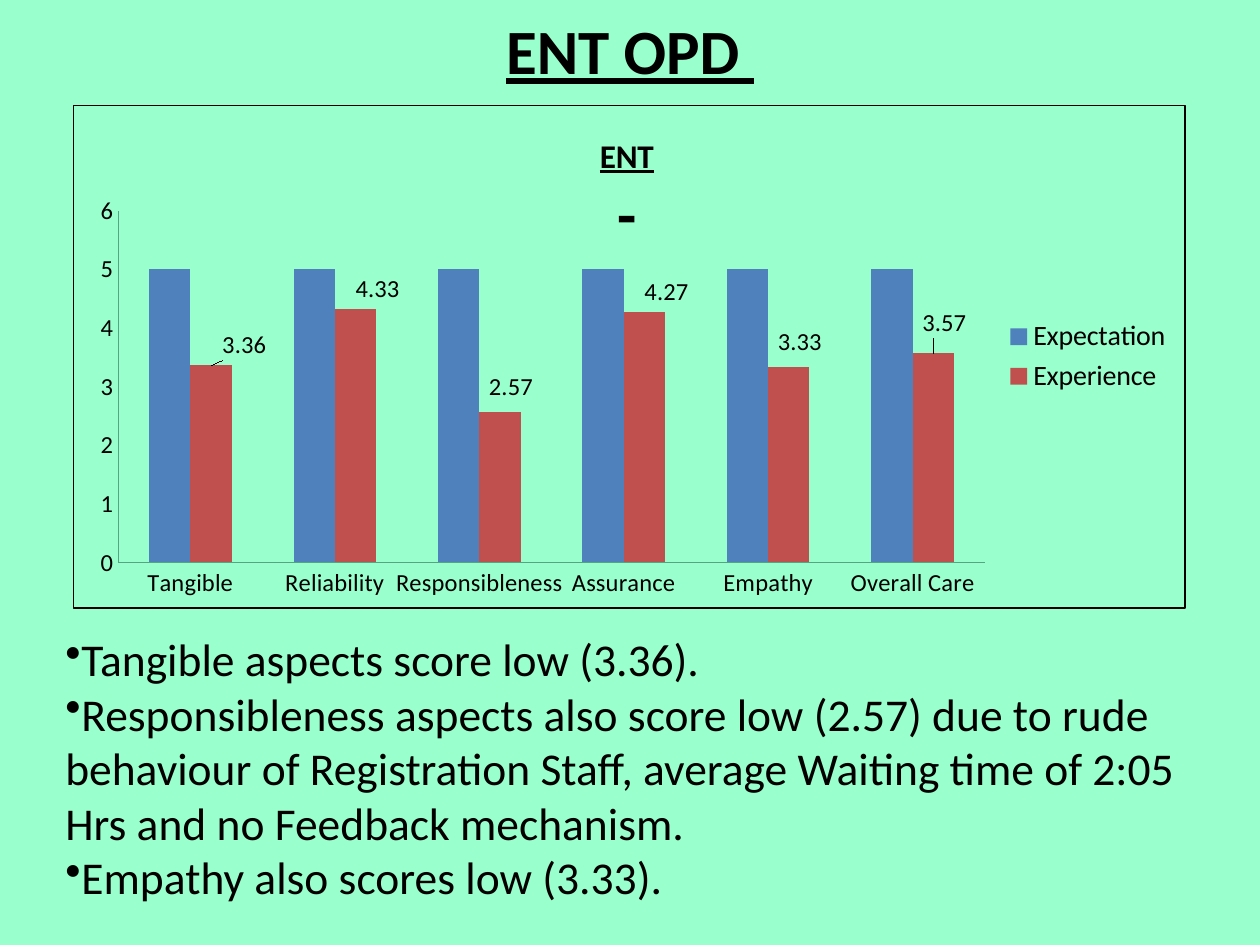
import pptx
import pptx.chart.data
import pptx.dml.color
import pptx.enum.chart
import pptx.enum.text
import pptx.oxml
import pptx.oxml.ns
import pptx.util

Inches, Pt = pptx.util.Inches, pptx.util.Pt
RGBColor = pptx.dml.color.RGBColor
qn = pptx.oxml.ns.qn

FONT = "Calibri"
BLACK = RGBColor(0x00, 0x00, 0x00)
MINT = RGBColor(0x99, 0xFF, 0xCC)
AXIS_GREEN = RGBColor(0x55, 0xA5, 0x85)

TITLE = "ENT OPD "
CATEGORIES = ["Tangible", "Reliability", "Responsibleness",
              "Assurance", "Empathy", "Overall Care"]
SERIES = [
    ("Expectation", [5] * 6, RGBColor(0x4F, 0x81, 0xBD)),
    ("Experience", [3.36, 4.33, 2.57, 4.27, 3.33, 3.57], RGBColor(0xC0, 0x50, 0x4D)),
]
# Shift of each Experience label from its default place, as a share of the chart
LABEL_SHIFTS = [(0.03, 0), (0.02, 0), (0.01, -0.01),
                (0.02, 0), (0.01, -0.01), (0.01, -0.02)]
CHART_TITLE = [("ENT", 19, True), ("-", 36, False)]
FINDINGS = [
    "Tangible aspects score low (3.36).",
    "Responsibleness aspects also score low (2.57) due to rude behaviour of "
    "Registration Staff, average Waiting time of 2:05 Hrs and no Feedback mechanism.",
    "Empathy also scores low (3.33).",
]


def style_font(font, size, bold=False, underline=False):
    font.name, font.size = FONT, Pt(size)
    font.bold, font.underline = bold, underline
    font.color.rgb = BLACK


def add_text(p, text, size, bold=False, underline=False):
    r = p.add_run()
    r.text = text
    style_font(r.font, size, bold, underline)


def add_text_box(s, left, top, width, height):
    tf = s.shapes.add_textbox(Inches(left), Inches(top),
                              Inches(width), Inches(height)).text_frame
    tf.word_wrap = True
    return tf


def manual_layout(inner=False, edge=False, **shares):
    """Return a c:layout element; shares are x, y, w, h of the chart."""
    tags = '<c:layoutTarget val="inner"/>' if inner else ""
    if edge:
        tags += '<c:xMode val="edge"/><c:yMode val="edge"/>'
    tags += "".join(f'<c:{key} val="{val}"/>' for key, val in shares.items())
    return pptx.oxml.parse_xml(
        f'<c:layout {pptx.oxml.ns.nsdecls("c")}>'
        f"<c:manualLayout>{tags}</c:manualLayout></c:layout>")


def set_layout(parent, after, layout):
    """Put the layout in parent, following the child tag after (None: first)."""
    for old in parent.findall(qn("c:layout")):
        parent.remove(old)
    if after is None:
        parent.insert(0, layout)
    else:
        parent.find(qn(after)).addnext(layout)


def add_score_chart(s):
    data = pptx.chart.data.CategoryChartData()
    data.categories = CATEGORIES
    for name, values, _ in SERIES:
        data.add_series(name, values)
    chart = s.shapes.add_chart(
        pptx.enum.chart.XL_CHART_TYPE.COLUMN_CLUSTERED,
        Inches(0.58), Inches(0.83), Inches(8.83), Inches(4), data).chart
    style_font(chart.font, 16)
    space = chart.element
    space.find(qn("c:txPr")).addprevious(pptx.oxml.parse_xml(
        f'<c:spPr {pptx.oxml.ns.nsdecls("c", "a")}><a:noFill/><a:ln w="9525">'
        f'<a:solidFill><a:srgbClr val="{BLACK}"/></a:solidFill></a:ln></c:spPr>'))

    tf = chart.chart_title.text_frame
    for i, (text, size, underline) in enumerate(CHART_TITLE):
        p = tf.add_paragraph() if i else tf.paragraphs[0]
        add_text(p, text, size, True, underline)
    title = space.chart.find(qn("c:title"))
    set_layout(title, "c:tx", manual_layout(edge=True, x=0.47, y=0.05))
    chart.chart_title.include_in_layout = True
    set_layout(space.chart.plotArea, None,
               manual_layout(True, True, x=0.04, y=0.21, w=0.78, h=0.7))

    chart.has_legend = True
    chart.legend.position = pptx.enum.chart.XL_LEGEND_POSITION.RIGHT
    chart.legend.include_in_layout = False
    style_font(chart.legend.font, 16)

    for axis in (chart.category_axis, chart.value_axis):
        axis.has_major_gridlines = False
        axis.major_tick_mark = pptx.enum.chart.XL_TICK_MARK.NONE
        axis.format.line.color.rgb = AXIS_GREEN
        axis.format.line.width = Pt(0.75)
        style_font(axis.tick_labels.font, 14)
    chart.value_axis.minimum_scale, chart.value_axis.maximum_scale = 0, 6
    chart.value_axis.major_unit = 1

    plot = chart.plots[0]
    plot.vary_by_categories = False
    plot.gap_width, plot.overlap = 150, 0
    for ser, (_, _, color) in zip(plot.series, SERIES):
        ser.format.fill.solid()
        ser.format.fill.fore_color.rgb = color

    experience = plot.series[1]
    labels = experience.data_labels
    labels.show_value = True
    labels.position = pptx.enum.chart.XL_LABEL_POSITION.OUTSIDE_END
    style_font(labels.font, 14)
    for i, (dx, dy) in enumerate(LABEL_SHIFTS):
        label = experience.points[i].data_label
        label.position = labels.position
        style_font(label.font, 14)
    for dlbl, (dx, dy) in zip(labels._element.findall(qn("c:dLbl")), LABEL_SHIFTS):
        set_layout(dlbl, "c:idx", manual_layout(x=dx, y=dy))


def main():
    prs = pptx.Presentation()
    prs.slide_width, prs.slide_height = Inches(10), Inches(7.5)
    s = prs.slides.add_slide(prs.slide_layouts[6])
    s.background.fill.solid()
    s.background.fill.fore_color.rgb = MINT

    tf = add_text_box(s, 0.5, 0.08, 9, 0.62)
    tf.vertical_anchor = pptx.enum.text.MSO_ANCHOR.MIDDLE
    tf.paragraphs[0].alignment = pptx.enum.text.PP_ALIGN.CENTER
    add_text(tf.paragraphs[0], TITLE, 36, True, True)

    tf = add_text_box(s, 0.42, 4.96, 9.17, 2.29)
    for i, finding in enumerate(FINDINGS):
        p = tf.add_paragraph() if i else tf.paragraphs[0]
        add_text(p, finding, 26)
        p._p.get_or_add_pPr().append(pptx.oxml.parse_xml(
            f'<a:buChar {pptx.oxml.ns.nsdecls("a")} char="•"/>'))

    add_score_chart(s)
    prs.save("out.pptx")


if __name__ == "__main__":
    main()
